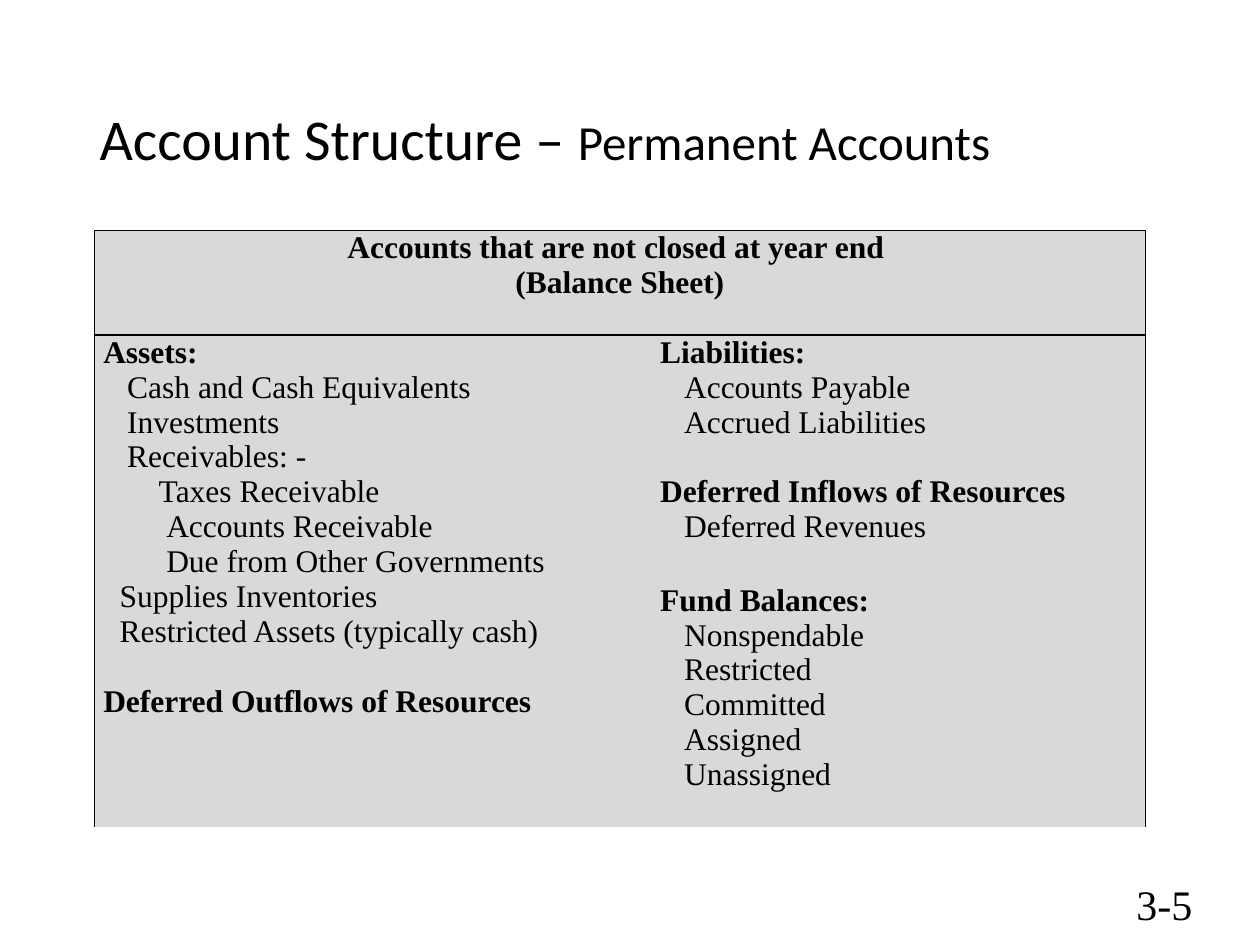
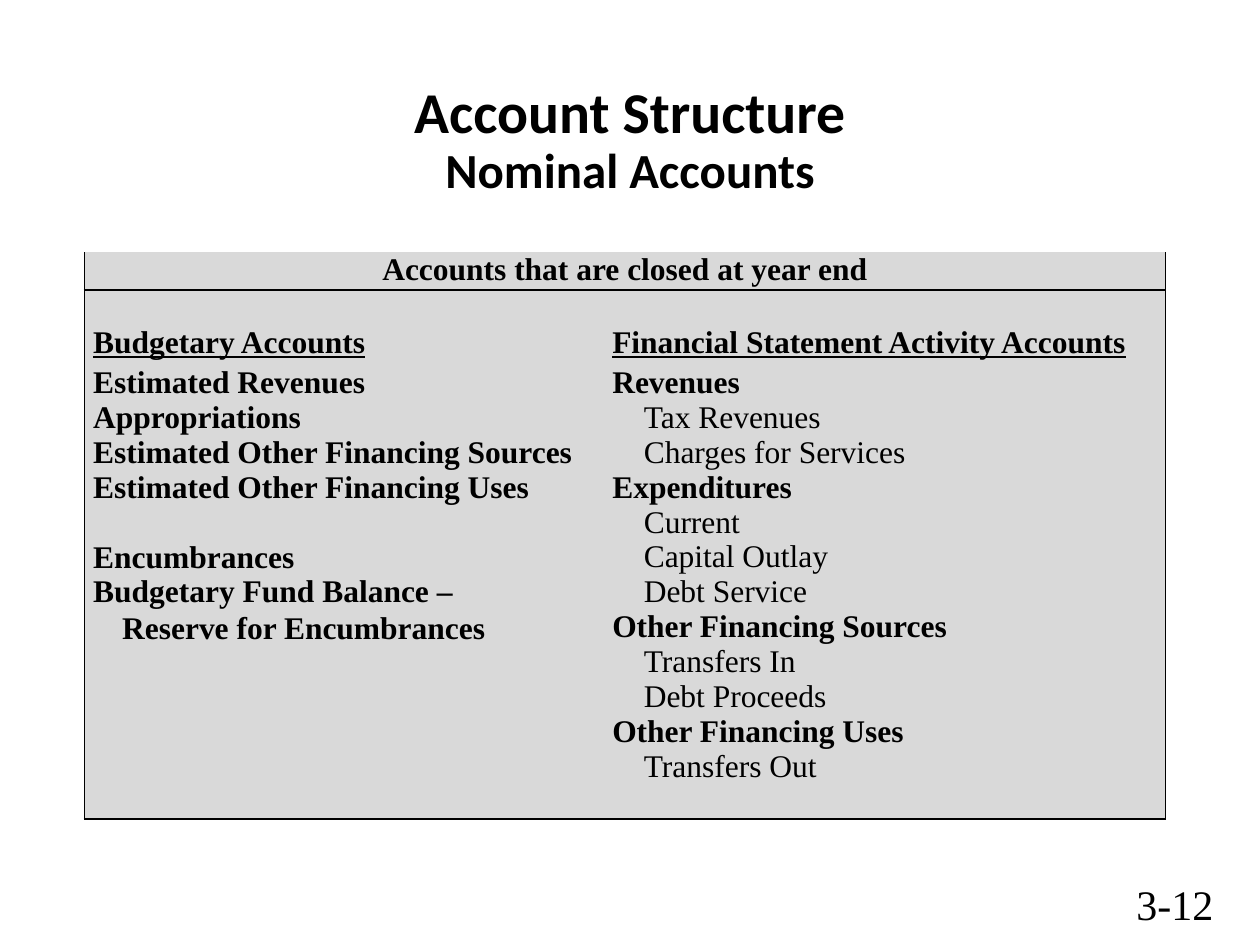
from dataclasses import dataclass

from lxml.etree import SubElement
from pptx import Presentation
from pptx.dml.color import RGBColor
from pptx.enum.text import MSO_ANCHOR, PP_ALIGN
from pptx.oxml.ns import qn
from pptx.util import Inches, Pt

BLACK = RGBColor(0x00, 0x00, 0x00)
GRAY = RGBColor(0xD9, 0xD9, 0xD9)
TITLE_FONT = "Calibri"
BODY_FONT = "Times New Roman"
BODY_SIZE = 18
BLANK_LINE = 20
CELL_MARGIN = 0.07
EDGES = "LRTB"


@dataclass
class Line:
    text: str
    indent: float = 0
    bold: bool = False
    underline: bool = False
    gap: float = 0


def heading(text, gap=0, indent=0, underline=False):
    return Line(text, indent, True, underline, gap)


def items(indent, *texts):
    return [Line(text, indent) for text in texts]


class AccountDeck:
    def __init__(self):
        self.presentation = Presentation()
        self.presentation.slide_width = Inches(10)
        self.presentation.slide_height = Inches(7.5)
        self.slide = None

    def add_slide(self, page_number):
        layout = self.presentation.slide_layouts[5]
        self.slide = self.presentation.slides.add_slide(layout)
        box = self.slide.shapes.add_textbox(Inches(8.92), Inches(6.92), Inches(0.87), Inches(0.5))
        box.text_frame.word_wrap = True
        self.add_run(box.text_frame.paragraphs[0], page_number, BODY_FONT, 24)

    def add_run(self, paragraph, text, font_name, size, bold=False, underline=False):
        run = paragraph.add_run()
        run.text = text
        run.font.name = font_name
        run.font.size = Pt(size)
        run.font.bold = bold
        run.font.underline = underline
        run.font.color.rgb = BLACK

    def add_title(self, main, detail, centered=False):
        title = self.slide.shapes.title
        title.left, title.top = Inches(0.69), Inches(0.4)
        title.width, title.height = Inches(8.62), Inches(1.45)
        title.text_frame.vertical_anchor = MSO_ANCHOR.MIDDLE
        paragraph = title.text_frame.paragraphs[0]
        paragraph.alignment = PP_ALIGN.CENTER if centered else PP_ALIGN.LEFT
        paragraph.line_spacing = 0.9
        self.add_run(paragraph, main, TITLE_FONT, 33, centered)
        if centered:
            paragraph.add_line_break()
        self.add_run(paragraph, detail, TITLE_FONT, 28, centered)

    def add_table(self, left, top, column_widths, row_heights):
        frame = self.slide.shapes.add_table(
            len(row_heights), len(column_widths), Inches(left), Inches(top),
            Inches(sum(column_widths)), Inches(sum(row_heights)))
        table = frame.table
        table.first_row = table.horz_banding = False
        for column, width in zip(table.columns, column_widths):
            column.width = Inches(width)
        for row, height in zip(table.rows, row_heights):
            row.height = Inches(height)
        table.cell(0, 0).merge(table.cell(0, len(column_widths) - 1))
        return table

    def fill_cell(self, cell, lines, borders, alignment=PP_ALIGN.LEFT, top_margin=0):
        cell.margin_left = cell.margin_right = Inches(CELL_MARGIN)
        cell.margin_top, cell.margin_bottom = Inches(top_margin), Inches(0)
        cell.fill.solid()
        cell.fill.fore_color.rgb = GRAY
        self.set_borders(cell, borders)
        frame = cell.text_frame
        for index, line in enumerate(lines):
            paragraph = frame.add_paragraph() if index else frame.paragraphs[0]
            paragraph.alignment = alignment
            paragraph.space_before = Pt(line.gap)
            if line.indent:
                properties = paragraph._p.get_or_add_pPr()
                properties.set("marL", str(Inches(line.indent)))
            self.add_run(paragraph, line.text, BODY_FONT, BODY_SIZE, line.bold, line.underline)

    def set_borders(self, cell, borders):
        properties = cell._tc.get_or_add_tcPr()
        for index, edge in enumerate(EDGES):
            border = SubElement(properties, qn(f"a:ln{edge}"), w=str(Pt(1)))
            properties.insert(index, border)
            if edge in borders:
                fill = SubElement(border, qn("a:solidFill"))
                SubElement(fill, qn("a:srgbClr"), val=str(BLACK))
            else:
                SubElement(border, qn("a:noFill"))

    def fill_header(self, table, lines, borders):
        self.fill_cell(table.cell(0, 0), lines, borders, PP_ALIGN.CENTER)
        self.set_borders(table.cell(0, 1), borders.replace("L", ""))

    def fill_row(self, table, row, columns, borders="", top_margin=0):
        for column, (lines, side) in enumerate(zip(columns, "LR")):
            self.fill_cell(table.cell(row, column), lines, borders + side, top_margin=top_margin)


def add_permanent_accounts(deck):
    deck.add_slide("3-5")
    deck.add_title("Account Structure – ", "Permanent Accounts")
    table = deck.add_table(0.75, 1.83, [4.42, 3.92], [0.83, 3.9])
    deck.fill_header(table, [
        heading("Accounts that are not closed at year end "),
        heading("(Balance Sheet)"),
    ], "LRTB")
    assets = [
        heading("Assets:"),
        *items(0.19, "Cash and Cash Equivalents", "Investments", "Receivables: -"),
        *items(0.44, "Taxes Receivable"),
        *items(0.5, "Accounts Receivable", "Due from Other Governments"),
        *items(0.13, "Supplies Inventories", "Restricted Assets (typically cash)"),
        heading("Deferred Outflows of Resources", BLANK_LINE),
    ]
    claims = [
        heading("Liabilities:"),
        *items(0.19, "Accounts Payable", "Accrued Liabilities"),
        heading("Deferred Inflows of Resources", BLANK_LINE),
        *items(0.19, "Deferred Revenues"),
        heading("Fund Balances:", BLANK_LINE + 2),
        *items(0.19, "Nonspendable", "Restricted", "Committed", "Assigned", "Unassigned"),
    ]
    deck.fill_row(table, 1, [assets, claims], "T")


def add_nominal_accounts(deck):
    deck.add_slide("3-12")
    deck.add_title("Account Structure", "Nominal Accounts", centered=True)
    table = deck.add_table(0.67, 2, [4.12, 4.46], [0.3, 0.6, 3.6])
    deck.fill_header(table, [heading("Accounts that are closed at year end")], "LRB")
    deck.fill_row(table, 1, [
        [heading("Budgetary Accounts", underline=True)],
        [heading("Financial Statement Activity Accounts", underline=True)],
    ], "T", top_margin=0.28)
    budgetary = [
        heading("Estimated Revenues"),
        heading("Appropriations"),
        heading("Estimated Other Financing Sources"),
        heading("Estimated Other Financing Uses"),
        heading("Encumbrances", BLANK_LINE),
        heading("Budgetary Fund Balance –"),
        heading("Reserve for Encumbrances", gap=1, indent=0.23),
    ]
    activity = [
        heading("Revenues"),
        *items(0.25, "Tax Revenues", "Charges for Services"),
        heading("Expenditures"),
        *items(0.25, "Current", "Capital Outlay", "Debt Service"),
        heading("Other Financing Sources"),
        *items(0.25, "Transfers In", "Debt Proceeds"),
        heading("Other Financing Uses"),
        *items(0.25, "Transfers Out"),
    ]
    deck.fill_row(table, 2, [budgetary, activity], "B")


def main():
    deck = AccountDeck()
    add_permanent_accounts(deck)
    add_nominal_accounts(deck)
    deck.presentation.save("out.pptx")


if __name__ == "__main__":
    main()
